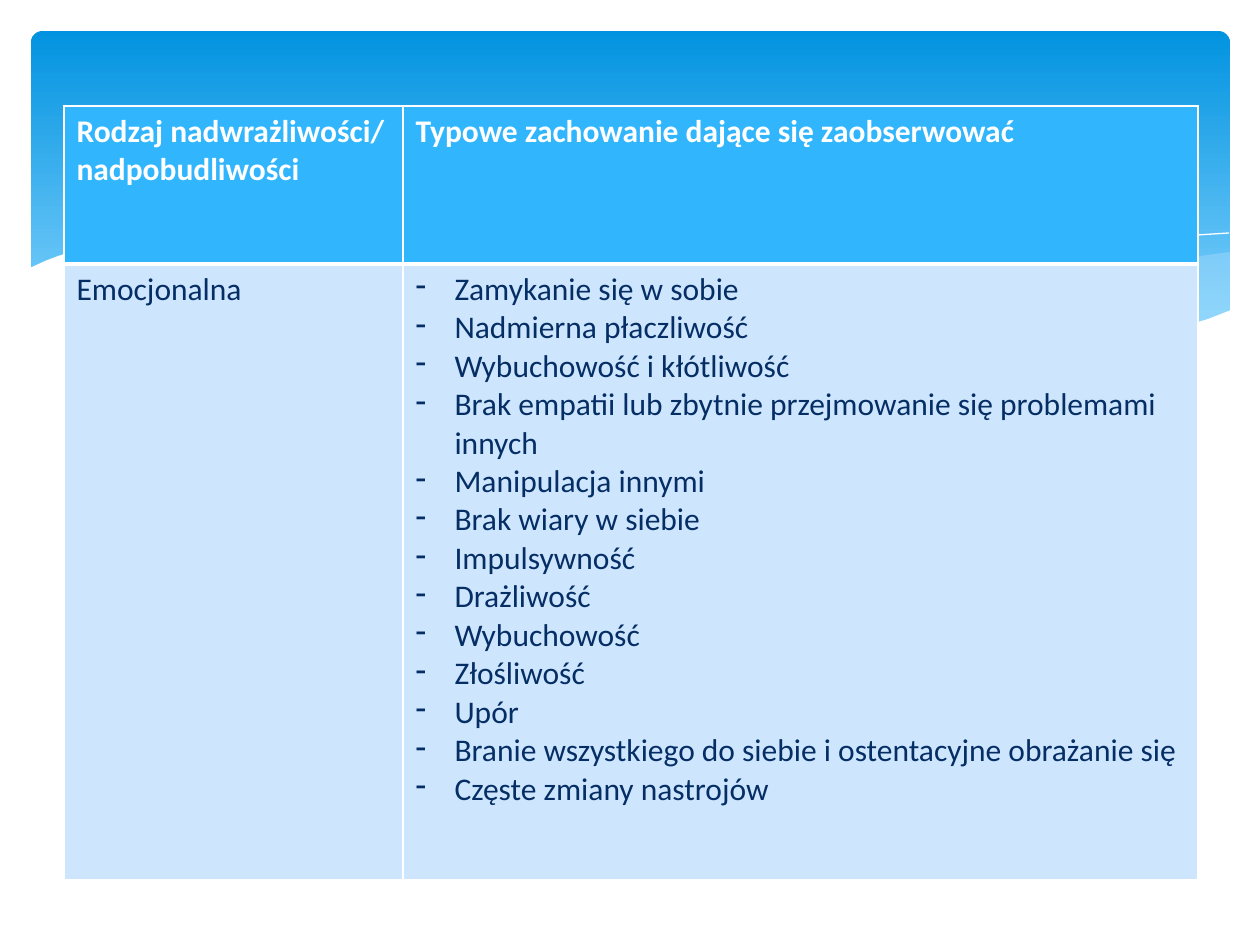
"""Build a slide with a table of emotional oversensitivity behaviours over a blue wave banner."""
from dataclasses import dataclass

from lxml import etree
from pptx import Presentation
from pptx.dml.color import RGBColor
from pptx.enum.shapes import MSO_SHAPE
from pptx.oxml.ns import qn
from pptx.util import Pt

ROUNDED = MSO_SHAPE.ROUNDED_RECTANGLE
EMU_PER_PX = 914400 / 126
BLANK_LAYOUT = 6
FONT = "Calibri"
COLORS = {
    "white": "FFFFFF",
    "banner_top": "0293E0",
    "banner_bottom": "83D3FE",
    "mist": "C6E7FC",
    "header": "31B6FD",
    "body": "CEE5FE",
    "navy": "052E65",
}


@dataclass(frozen=True)
class Wave:
    points: tuple[tuple[int, int], ...]
    fill: str = ""
    alpha: int = 100


@dataclass(frozen=True)
class RowStyle:
    fill: str
    text: str
    bold: bool
    top_border: int
    bottom_border: int


WAVES = (
    Wave(((1229, 252), (1194, 257), (1142, 268), (1085, 281), (1014, 298), (949, 312),
          (889, 324), (833, 334), (888, 341), (939, 346), (984, 349), (1026, 350),
          (1064, 348), (1099, 345), (1130, 339), (1160, 334), (1187, 326), (1213, 318),
          (1230, 311), (1230, 252)), "mist", 29),
    Wave(((1125, 344), (1091, 339), (1017, 328), (934, 311), (842, 291), (793, 280),
          (736, 266), (682, 255), (632, 247), (586, 241), (529, 235), (479, 233),
          (433, 234), (394, 237), (360, 241), (407, 247), (456, 256), (509, 266),
          (566, 280), (619, 292), (713, 312), (779, 325), (838, 335), (893, 343),
          (943, 348), (989, 350), (1031, 350), (1068, 349), (1104, 346)), "mist", 40),
    Wave(((389, 246), (413, 242), (445, 238), (488, 236), (546, 236), (616, 239),
          (701, 248), (801, 262), (916, 285), (1002, 304), (1095, 329), (1143, 343))),
    Wave(((772, 324), (823, 310), (876, 296), (942, 281), (1016, 265), (1091, 251),
          (1146, 242), (1198, 235), (1229, 233))),
    Wave(((1231, 310), (1208, 319), (1172, 330), (1133, 339), (1087, 345), (1037, 349),
          (980, 348), (915, 343), (842, 334), (760, 320), (667, 301), (563, 277),
          (493, 260), (428, 248), (368, 239), (315, 234), (266, 232), (223, 232),
          (184, 233), (150, 236), (120, 241), (96, 246), (74, 251), (58, 256),
          (45, 261), (32, 267), (29, 268), (29, 415), (1231, 415)), "white"),
)

HEADER = RowStyle("header", "white", True, 1, 3)
BODY = RowStyle("body", "navy", False, 3, 1)
COLUMN_WIDTHS = (339, 795)
ROW_HEIGHTS = (158, 616)
BULLET_INDENT = 39
HEADINGS = ("Rodzaj nadwrażliwości/ nadpobudliwości", "Typowe zachowanie dające się zaobserwować")
SENSITIVITY = "Emocjonalna"
BEHAVIOURS = (
    "Zamykanie się w sobie",
    "Nadmierna płaczliwość",
    "Wybuchowość i kłótliwość",
    "Brak empatii lub zbytnie przejmowanie się problemami innych",
    "Manipulacja innymi",
    "Brak wiary w siebie",
    "Impulsywność",
    "Drażliwość",
    "Wybuchowość",
    "Złośliwość",
    "Upór",
    "Branie wszystkiego do siebie i ostentacyjne obrażanie się",
    "Częste zmiany nastrojów",
)


def px(length: int) -> int:
    """Turn pixels into EMU."""
    return round(length * EMU_PER_PX)


def rgb(name: str) -> RGBColor:
    """Look up a palette colour."""
    return RGBColor.from_string(COLORS[name])


def draw_banner(slide) -> None:
    """Draw the rounded gradient banner."""
    banner = slide.shapes.add_shape(ROUNDED, px(31), px(31), px(1199), px(341))
    banner.adjustments[0] = 0.034
    banner.shadow.inherit = False
    banner.line.fill.background()
    banner.fill.gradient()
    banner.fill.gradient_angle = 270
    stops = banner.fill.gradient_stops
    for stop, position, color in zip(stops, (0, 0.9), ("banner_top", "banner_bottom")):
        stop.position = position
        stop.color.rgb = rgb(color)


def draw_wave(slide, wave: Wave) -> None:
    """Draw a filled wave, or a white hairline when it has no fill."""
    builder = slide.shapes.build_freeform(*wave.points[0], scale=EMU_PER_PX)
    builder.add_line_segments(wave.points[1:], close=bool(wave.fill))
    outline = builder.convert_to_shape()
    outline.shadow.inherit = False
    if not wave.fill:
        outline.fill.background()
        outline.line.color.rgb = rgb("white")
        outline.line.width = Pt(0)
        return
    outline.line.fill.background()
    outline.fill.solid()
    outline.fill.fore_color.rgb = rgb(wave.fill)
    if wave.alpha < 100:
        color = outline.fill._xPr.find(qn("a:solidFill"))[0]
        etree.SubElement(color, qn("a:alpha"), val=str(wave.alpha * 1000))


def add_borders(cell, style: RowStyle) -> None:
    """Give a cell white borders."""
    properties = cell._tc.get_or_add_tcPr()
    widths = {"L": 1, "R": 1, "T": style.top_border, "B": style.bottom_border}
    for index, (side, width) in enumerate(widths.items()):
        border = etree.Element(qn(f"a:ln{side}"), w=str(Pt(width)))
        paint = etree.SubElement(border, qn("a:solidFill"))
        etree.SubElement(paint, qn("a:srgbClr"), val=COLORS["white"])
        properties.insert(index, border)


def add_bullet(paragraph) -> None:
    """Set a hanging dash in front of a paragraph."""
    properties = paragraph._p.get_or_add_pPr()
    properties.set("marL", str(px(BULLET_INDENT)))
    properties.set("indent", str(-px(BULLET_INDENT)))
    bullet = etree.Element(qn("a:buChar"), char="-")
    properties.insert(0, bullet)


def fill_cell(cell, lines: tuple[str, ...], style: RowStyle, bulleted: bool = False) -> None:
    """Write and format the lines of one cell."""
    cell.fill.solid()
    cell.fill.fore_color.rgb = rgb(style.fill)
    add_borders(cell, style)
    cell.text_frame.text = "\n".join(lines)
    for paragraph in cell.text_frame.paragraphs:
        paragraph.font.name = FONT
        paragraph.font.size = Pt(18)
        paragraph.font.bold = style.bold
        paragraph.font.color.rgb = rgb(style.text)
        if bulleted:
            add_bullet(paragraph)


def draw_table(slide) -> None:
    """Draw the behaviour table."""
    frame = slide.shapes.add_table(2, 2, px(64), px(106), px(sum(COLUMN_WIDTHS)), px(sum(ROW_HEIGHTS)))
    table = frame.table
    table.horz_banding = False
    for column, width in zip(table.columns, COLUMN_WIDTHS):
        column.width = px(width)
    for row, height in zip(table.rows, ROW_HEIGHTS):
        row.height = px(height)
    for index, heading in enumerate(HEADINGS):
        fill_cell(table.cell(0, index), (heading,), HEADER)
    fill_cell(table.cell(1, 0), (SENSITIVITY,), BODY)
    fill_cell(table.cell(1, 1), BEHAVIOURS, BODY, bulleted=True)


def main() -> None:
    """Build and save the slide."""
    deck = Presentation()
    deck.slide_width, deck.slide_height = px(1260), px(945)
    slide = deck.slides.add_slide(deck.slide_layouts[BLANK_LAYOUT])
    draw_banner(slide)
    for wave in WAVES:
        draw_wave(slide, wave)
    draw_table(slide)
    deck.save("out.pptx")


if __name__ == "__main__":
    main()
